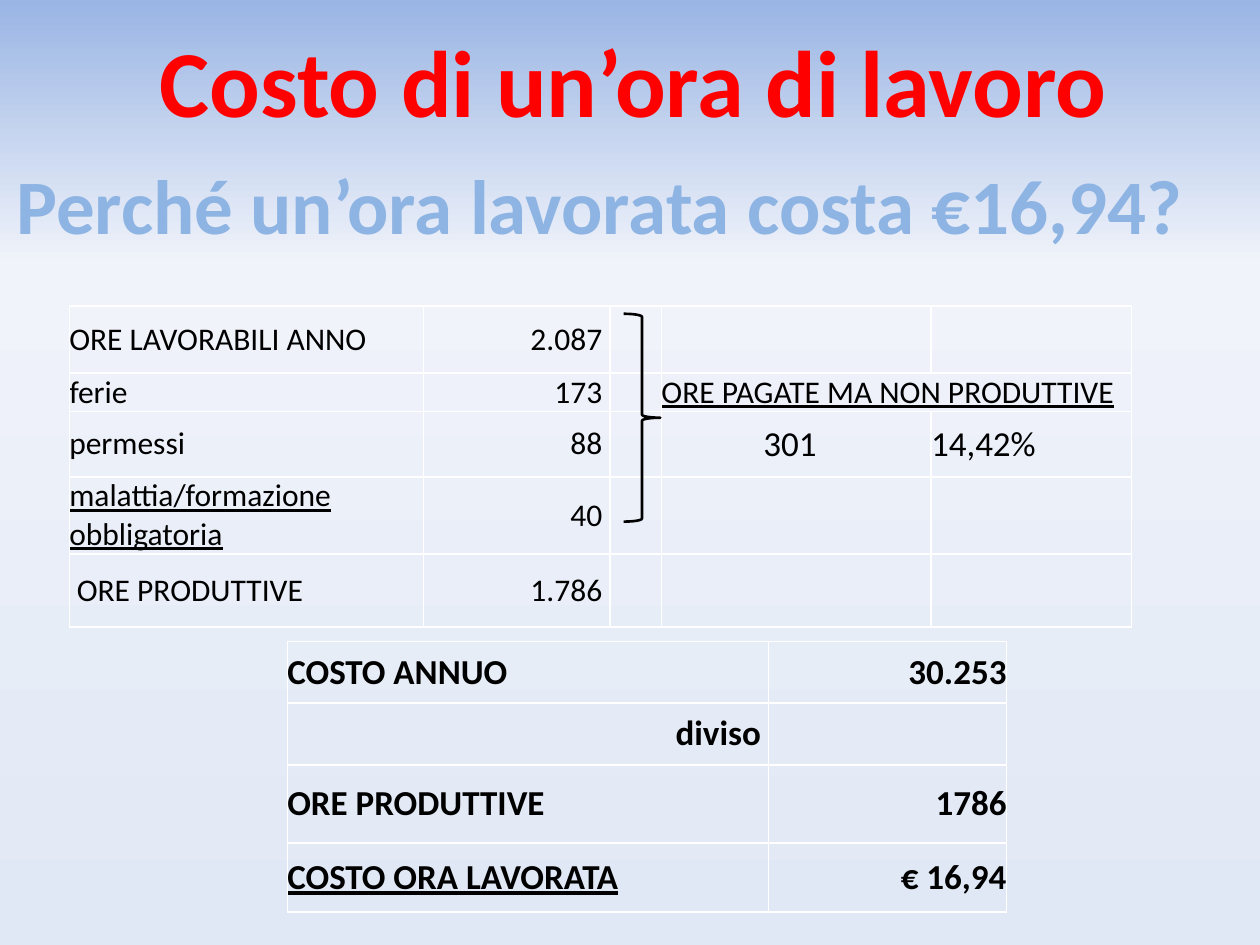
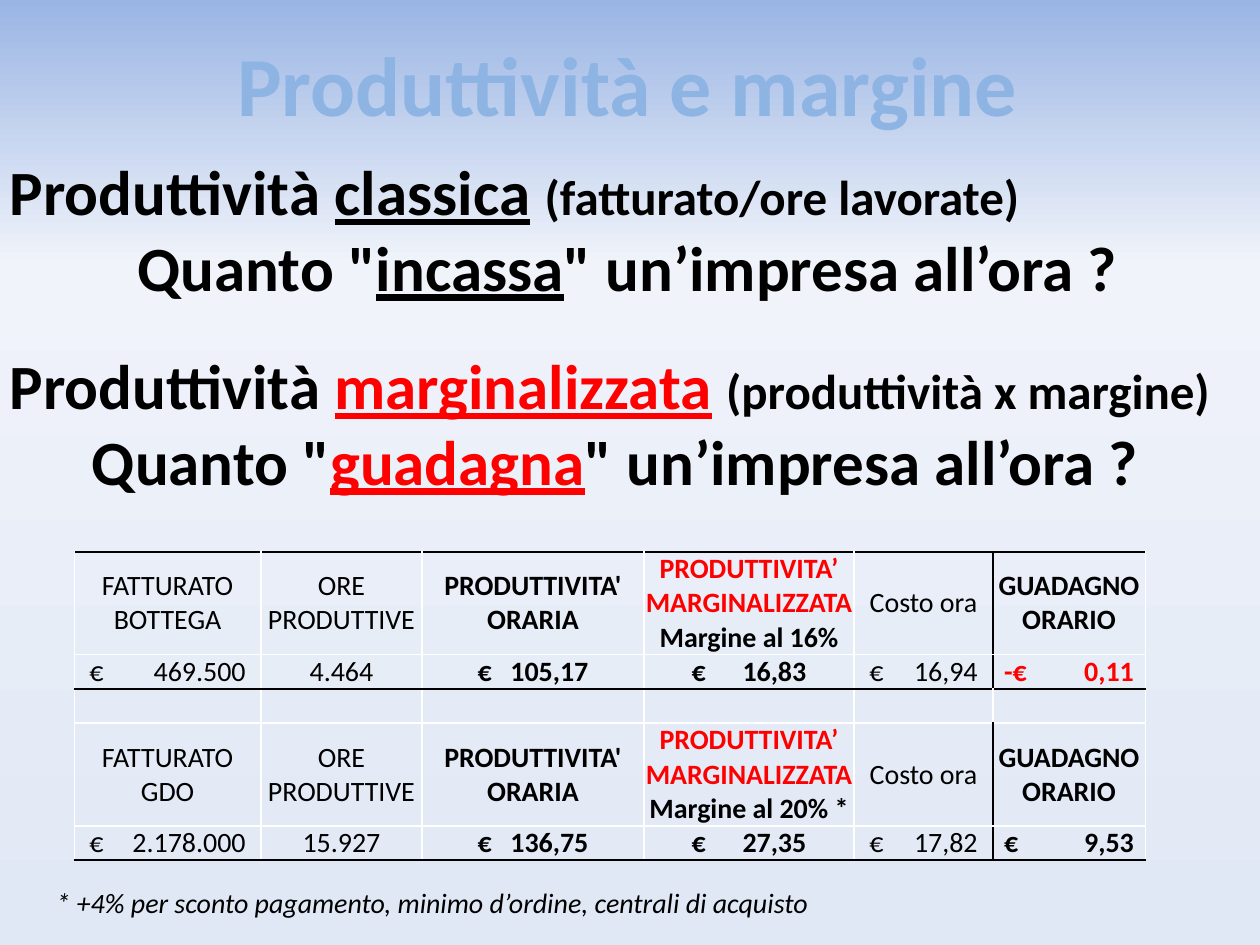
import copy

import lxml.etree
import pptx
import pptx.dml.color
import pptx.enum.shapes
import pptx.enum.text
import pptx.oxml.ns
import pptx.util

Inches = pptx.util.Inches
Pt = pptx.util.Pt
qn = pptx.oxml.ns.qn
ALIGN = pptx.enum.text.PP_ALIGN
ANCHOR = pptx.enum.text.MSO_ANCHOR

FONT = "Calibri"
BLACK, WHITE, RED, SKY = "000000", "FFFFFF", "FF0000", "8EB4E3"
BACKGROUND = [(0, "9AB5E4"), (0.28, "F0F3FA"), (1, "E1E8F5")]
TITLE_ONLY = 5


def rgb(color):
    return pptx.dml.color.RGBColor.from_string(color)


# Text
def set_font(font, size=None, color=None, bold=None, italic=None, underline=None):
    if size:
        font.size = Pt(size)
    if color:
        font.color.rgb = rgb(color)
    for name, value in (("bold", bold), ("italic", italic), ("underline", underline)):
        if value is not None:
            setattr(font, name, value)


def write(p, runs, align=ALIGN.LEFT, color=BLACK, before=0, **style):
    """Runs are plain strings, or pairs of a string and its own font settings."""
    p.alignment = align
    if before:
        p.space_before = Pt(before)
    p.font.name = FONT
    set_font(p.font, color=color, **style)
    for run in [runs] if isinstance(runs, str) else runs:
        text, own = (run, {}) if isinstance(run, str) else run
        r = p.add_run()
        r.text = text
        set_font(r.font, **own)


def place(sp, left, top, width, height, anchor=ANCHOR.TOP):
    sp.left, sp.top = Inches(left), Inches(top)
    sp.width, sp.height = Inches(width), Inches(height)
    tf = sp.text_frame
    tf.word_wrap = True
    tf.auto_size = pptx.enum.text.MSO_AUTO_SIZE.NONE
    tf.vertical_anchor = anchor
    return tf


def add_title(slide, text, box, size, color):
    tf = place(slide.shapes.title, *box)
    write(tf.paragraphs[0], text, ALIGN.CENTER, color, size=size, bold=True)
    return tf


def add_text(slide, box, paragraphs, anchor=ANCHOR.TOP):
    sp = slide.shapes.add_textbox(0, 0, 0, 0)
    tf = place(sp, *box, anchor)
    for i, (runs, style) in enumerate(paragraphs):
        write(tf.add_paragraph() if i else tf.paragraphs[0], runs, **style)


# Tables
def set_borders(cell, colors):
    tc_pr = cell._tc.get_or_add_tcPr()
    for i, side in enumerate("LRTB"):
        ln = lxml.etree.Element(qn("a:ln" + side), w=str(Pt(1)))
        fill = lxml.etree.SubElement(ln, qn("a:solidFill"))
        lxml.etree.SubElement(fill, qn("a:srgbClr"), val=colors[side])
        tc_pr.insert(i, ln)


def white_borders(row, col):
    return dict.fromkeys("LRTB", WHITE)


def add_table(slide, left, top, cols, rows, size, borders=white_borders):
    table = slide.shapes.add_table(
        len(rows), len(cols), Inches(left), Inches(top),
        Inches(sum(cols)), Inches(sum(rows))).table
    table.first_row = table.horz_banding = False
    for column, width in zip(table.columns, cols):
        column.width = Inches(width)
    for i, height in enumerate(rows):
        table.rows[i].height = Inches(height)
        for j in range(len(cols)):
            cell = table.cell(i, j)
            cell.fill.background()
            cell.vertical_anchor = ANCHOR.MIDDLE
            cell.margin_left = cell.margin_right = 0
            cell.margin_top = cell.margin_bottom = 0
            set_borders(cell, borders(i, j))
            cell.text_frame.paragraphs[0].font.size = Pt(size)
    return table


def write_cell(cell, text, align=ALIGN.LEFT, left=0, right=0, **style):
    cell.margin_left, cell.margin_right = Inches(left), Inches(right)
    write(cell.text_frame.paragraphs[0], text, align, **style)


def write_amount(cell, text, col_width, span, **style):
    """Currency sign and figure at the two ends of a centred span."""
    write_cell(cell, text, left=(col_width - span) / 2, **style)
    p_pr = cell.text_frame.paragraphs[0]._p.get_or_add_pPr()
    tabs = lxml.etree.Element(qn("a:tabLst"))
    lxml.etree.SubElement(tabs, qn("a:tab"), pos=str(Inches(span)), algn="r")
    p_pr.insert(0, tabs)


# Shared background
def set_background(master):
    fill = master.background.fill
    fill.gradient()
    fill.gradient_angle = 270
    stops = master.element.find(".//" + qn("a:gsLst"))
    stops.append(copy.deepcopy(stops[0]))
    for stop, (position, color) in zip(fill.gradient_stops, BACKGROUND):
        stop.position = position
        stop.color.rgb = rgb(color)


# Slide 1: cost of a working hour
def build_hour_cost(prs):
    slide = prs.slides.add_slide(prs.slide_layouts[TITLE_ONLY])
    tf = add_title(slide, "Costo di un’ora di lavoro", (0.03, 0.13, 10, 1.92), 54, RED)
    write(tf.add_paragraph(), "Perché un’ora lavorata costa €16,94?",
          color=SKY, before=12.2, size=44, bold=True)

    # Paid and productive hours
    hours = add_table(slide, 0.55, 2.43, [2.81, 1.48, 0.41, 2.14, 1.59],
                      [0.53, 0.29, 0.52, 0.57, 0.58], 18)
    labels = [
        ("ORE LAVORABILI ANNO", "2.087", {}),
        ("ferie", "173", {}),
        ("permessi", "88", {}),
        ("malattia/formazione obbligatoria", "40", {"underline": True}),
        ("ORE PRODUTTIVE", "1.786", {"left": 0.06}),
    ]
    for i, (label, value, style) in enumerate(labels):
        write_cell(hours.cell(i, 0), label, size=18, **style)
        write_cell(hours.cell(i, 1), value, ALIGN.RIGHT, right=0.06, size=18)
    hours.cell(1, 3).merge(hours.cell(1, 4))
    write_cell(hours.cell(1, 3), "ORE PAGATE MA NON PRODUTTIVE", size=18, underline=True)
    write_cell(hours.cell(2, 3), "301", left=0.81, size=20)
    write_cell(hours.cell(2, 4), "14,42%", size=20)

    # Brace gathering the hours
    brace = slide.shapes.add_shape(
        pptx.enum.shapes.MSO_SHAPE.RIGHT_BRACE,
        Inches(4.95), Inches(2.49), Inches(0.29), Inches(1.65))
    brace.shadow.inherit = False
    brace.fill.background()
    brace.line.color.rgb = rgb(BLACK)
    brace.line.width = Pt(1.5)

    # Division giving the hourly cost
    cost = add_table(slide, 2.28, 5.09, [3.82, 1.89], [0.49, 0.49, 0.62, 0.55], 20)
    bold = {"size": 20, "bold": True}
    for i, label, value, underline in [
        (0, "COSTO ANNUO", "30.253", False),
        (2, "ORE PRODUTTIVE", "1786", False),
        (3, "COSTO ORA LAVORATA", "€ 16,94", True),
    ]:
        write_cell(cost.cell(i, 0), label, underline=underline, **bold)
        write_cell(cost.cell(i, 1), value, ALIGN.RIGHT, **bold)
    write_cell(cost.cell(1, 0), "diviso", ALIGN.RIGHT, right=0.06, **bold)


# Slide 2: productivity and margin
def productivity_borders(row, col):
    colors = white_borders(row, col)
    if row in (0, 2):
        colors["T"] = BLACK
    if row in (1, 4):
        colors["B"] = BLACK
    if row != 2 and col == 4:
        colors["R"] = BLACK
    if row != 2 and col == 5:
        colors["L"] = BLACK
    return colors


def build_productivity(prs):
    slide = prs.slides.add_slide(prs.slide_layouts[TITLE_ONLY])
    add_title(slide, "Produttività e margine", (-0.02, 0.21, 10, 0.91), 48, SKY)

    # Two definitions, each with its question
    big = {"size": 36, "bold": True}
    question = dict(big, align=ALIGN.CENTER)
    line, small = {"underline": True}, {"size": 28}
    red_line = {"underline": True, "color": RED}
    add_text(slide, (-0.02, 1.14, 10, 2.86), [
        (["Produttività ", ("classica", line), " ",
          ("(fatturato/ore lavorate)", small)], big),
        (["Quanto \"", ("incassa", line), "\" un’impresa all’ora ?"], question),
        (["Produttività ", ("marginalizzata", red_line), " ",
          ("(produttività x margine)", small)], dict(big, before=24.4)),
        (["Quanto \"", ("guadagna", red_line), "\" un’impresa all’ora ?\t"], question),
    ], ANCHOR.BOTTOM)

    # Comparison of the two kinds of shop
    cols = [1.48, 1.28, 1.76, 1.67, 1.1, 1.21]
    spans = [1.24, None, 0.88, 0.91, 0.86, 1.03]
    bold_cols = (2, 3, 5)
    table = add_table(slide, 0.59, 4.38, cols, [0.76, 0.25, 0.25, 0.76, 0.25], 16,
                      productivity_borders)
    for top, shop, margin, values in [
        (0, ["FATTURATO BOTTEGA"], "Margine al 16%",
         ["€\t469.500", "4.464", "€\t105,17", "€\t16,83", "€\t16,94", "-€\t0,11"]),
        (3, ["FATTURATO", "GDO"], "Margine al 20% *",
         ["€\t2.178.000", "15.927", "€\t136,75", "€\t27,35", "€\t17,82", "€\t9,53"]),
    ]:
        headers = [shop, ["ORE PRODUTTIVE"], ["PRODUTTIVITA'", "ORARIA"],
                   ["PRODUTTIVITA’ MARGINALIZZATA", margin],
                   ["Costo ora"], ["GUADAGNO ORARIO"]]
        for j, (header, value) in enumerate(zip(headers, values)):
            style = {"size": 16, "bold": j in bold_cols}
            tf = table.cell(top, j).text_frame
            for k, text in enumerate(header):
                p = tf.add_paragraph() if k else tf.paragraphs[0]
                color = RED if j == 3 and k == 0 else BLACK
                write(p, text, ALIGN.CENTER, color, **style)
            cell = table.cell(top + 1, j)
            if spans[j]:
                color = RED if value.startswith("-") else BLACK
                write_amount(cell, value, cols[j], spans[j], color=color, **style)
            else:
                write_cell(cell, value, ALIGN.CENTER, **style)

    # Footnote
    add_text(slide, (0.35, 6.98, 7.56, 0.37), [
        ("* +4% per sconto pagamento, minimo d’ordine, centrali di acquisto",
         {"size": 16, "italic": True})])


def main():
    prs = pptx.Presentation()
    prs.slide_width, prs.slide_height = Inches(10), Inches(7.5)
    set_background(prs.slide_master)
    build_hour_cost(prs)
    build_productivity(prs)
    prs.save("out.pptx")


if __name__ == "__main__":
    main()
